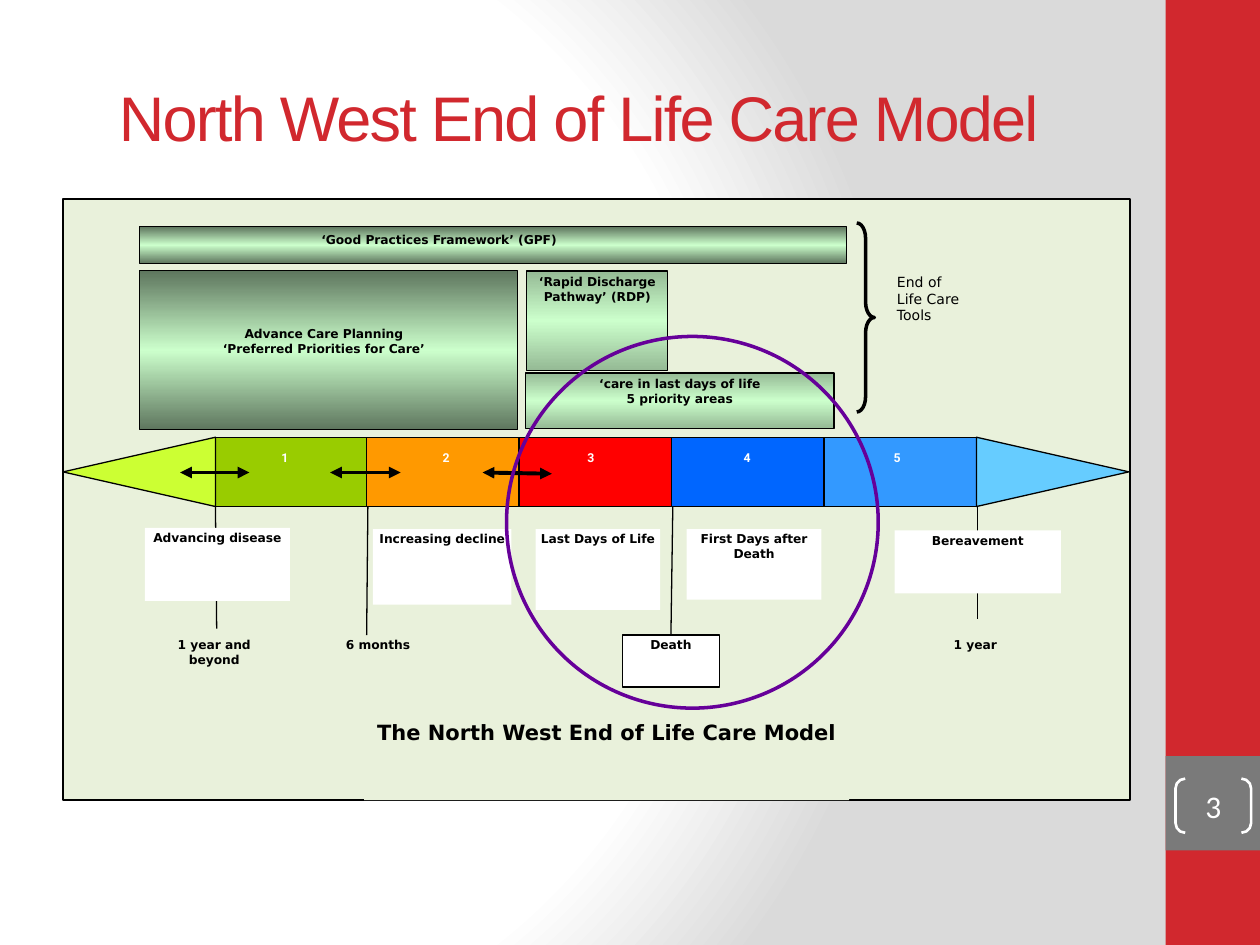
from copy import deepcopy
from pptx import Presentation
from pptx.dml.color import RGBColor as RGB
from pptx.enum.shapes import MSO_CONNECTOR as LINK, MSO_SHAPE as FORM
from pptx.enum.text import MSO_ANCHOR as ANCHOR, PP_ALIGN as ALIGN
from pptx.oxml import parse_xml
from pptx.oxml.ns import nsdecls, qn
from pptx.util import Inches, Pt


class Theme:
    red, gray, white, black = "D1282E", "7A7A7A", "FFFFFF", "000000"
    panel, ring = "E9F1DB", "660099"
    soft = [(0, "95BA95"), (0.5, "CCFFCC"), (1, "95BA95")]
    deep = [(0, "5E765E"), (0.5, "CCFFCC"), (1, "5E765E")]
    back = [(0, "FFFFFF"), (0.75, "FFFFFF"), (1, "DADADA")]
    stages = ["99CC00", "FF9900", "FF0000", "0066FF", "3399FF"]
    start, end = "CCFF33", "66CCFF"
    body, head, digit, page = "DejaVu Sans", "Arial", "Roboto", "Calibri"
    small, note, caption, number, title = 7, 8, 12, 18, 36


def grade(fill, root, stops):
    fill.gradient()
    marks = root.find(".//" + qn("a:gsLst"))
    marks.append(deepcopy(marks[0]))
    for mark, (place, color) in zip(fill.gradient_stops, stops):
        mark.position = place
        mark.color.rgb = RGB.from_string(color)


def box(at, text="", form=FORM.RECTANGLE, fill=None, line=None, width=0.75,
        size=Theme.small, font=Theme.body, color=Theme.black, bold=True,
        align=ALIGN.CENTER, anchor=ANCHOR.TOP, inset=(0.06, 0.03)):
    at = [Inches(n) for n in at]
    if fill or line:
        shape = slide.shapes.add_shape(form, *at)
        shape.shadow.inherit = False
        if isinstance(fill, list):
            grade(shape.fill, shape._element, fill)
            shape.fill.gradient_angle = 90
        elif fill:
            shape.fill.solid()
            shape.fill.fore_color.rgb = RGB.from_string(fill)
        else:
            shape.fill.background()
        if line:
            shape.line.color.rgb = RGB.from_string(line)
            shape.line.width = Pt(width)
        else:
            shape.line.fill.background()
    else:
        shape = slide.shapes.add_textbox(*at)
    if text:
        frame = shape.text_frame
        frame.word_wrap = True
        frame.vertical_anchor = anchor
        frame.margin_left = frame.margin_right = Inches(inset[0])
        frame.margin_top = frame.margin_bottom = Inches(inset[1])
        frame.text = text
        for par in frame.paragraphs:
            par.alignment = align
            par.font.size, par.font.name, par.font.bold = Pt(size), font, bold
            par.font.color.rgb = RGB.from_string(color)
    return shape


deck = Presentation()
deck.slide_width, deck.slide_height = Inches(10), Inches(7.5)
slide = deck.slides.add_slide(deck.slide_layouts[6])

grade(slide.background.fill, slide._element, Theme.back)
blend = slide._element.find(".//" + qn("a:gradFill"))
blend.remove(blend.find(qn("a:lin")))
blend.append(parse_xml(
    f'<a:path {nsdecls("a")} path="circle">'
    '<a:fillToRect l="20000" t="50000" r="100000" b="50000"/></a:path>'))

box((9.25, 0, 0.75, 7.5), fill=Theme.red)
box((9.25, 6, 0.75, 0.75), fill=Theme.gray)
title = box((0.43, 0.3, 8.33, 1.25), "North West End of Life Care Model",
            size=Theme.title, font=Theme.head, color=Theme.red, bold=False,
            anchor=ANCHOR.MIDDLE, inset=(0.1, 0.05))
title.text_frame.paragraphs[0].runs[0].font._element.set("spc", "-100")

box((0.5, 1.58, 8.47, 4.77), fill=Theme.panel, line=Theme.black, width=1.5)
box((2.89, 5.68, 3.85, 0.67), "The North West End of Life Care Model",
    fill=Theme.panel, size=Theme.caption)

tools = [
    ((4.17, 2.96, 2.45, 0.44), Theme.soft,
     "‘care in last days of life\n5 priority areas"),
    ((4.18, 2.15, 1.12, 0.79), Theme.soft, "‘Rapid Discharge Pathway’ (RDP)"),
    ((1.11, 2.15, 3, 1.26), Theme.deep, ""),
    ((1.11, 1.8, 5.61, 0.29), Theme.deep, ""),
]
for at, fill, text in tools:
    box(at, text, fill=fill, line=Theme.black)
box((1.33, 2.56, 2.48, 0.48),
    "Advance Care Planning\n‘Preferred Priorities for Care’")
box((2.49, 1.81, 2.73, 0.33), "‘Good Practices Framework’ (GPF)",
    align=ALIGN.LEFT)
box((7.02, 2.12, 1.11, 1.16), "End of\nLife Care\nTools", size=Theme.note,
    bold=False, align=ALIGN.LEFT, inset=(0.1, 0.05))
brace = box((6.8, 1.77, 0.14, 1.5), form=FORM.RIGHT_BRACE, line=Theme.black,
            width=2)
brace.adjustments[0] = 0.867

mids = [2.26, 3.54, 4.69, 5.93, 7.12]
for i, (fill, mid) in enumerate(zip(Theme.stages, mids)):
    box((1.7 + 1.21 * i, 3.47, 1.21, 0.55), fill=fill, line=Theme.black)
    box((mid - 0.22, 3.54, 0.44, 0.37), str(i + 1), font=Theme.digit,
        color=Theme.white)
for left, turn, fill in [(0.83, 270, Theme.start), (8.08, 90, Theme.end)]:
    tip = box((left, 3.14, 0.55, 1.21), form=FORM.ISOSCELES_TRIANGLE,
              fill=fill, line=Theme.black)
    tip.rotation = turn

death = box((4.94, 5.04, 0.77, 0.41), "Death", fill=Theme.white,
            line=Theme.black, width=1, inset=(0.04, 0.02))
links = [
    (5.33, 5.04, 5.34, 4.02, False),
    (1.71, 4.02, 1.72, 4.99, False),
    (7.76, 4.02, 7.76, 4.91, False),
    (2.91, 5.04, 2.92, 4.02, False),
    (2.62, 3.75, 3.18, 3.75, True),
    (1.43, 3.75, 1.98, 3.75, True),
    (3.83, 3.75, 4.38, 3.76, True),
]
for i, (*ends, arrow) in enumerate(links):
    link = slide.shapes.add_connector(LINK.STRAIGHT, *map(Inches, ends))
    link.line.color.rgb = RGB.from_string(Theme.black)
    link.line.width = Pt(2.25 if arrow else 0.75)
    if arrow:
        for tag in ("headEnd", "tailEnd"):
            link.line._get_or_add_ln().append(
                parse_xml(f'<a:{tag} {nsdecls("a")} type="triangle"/>'))
    link._element.spPr.append(parse_xml(f'<a:effectLst {nsdecls("a")}/>'))
    if i == 0:
        link.begin_connect(death, 0)

labels = [
    ((1.15, 4.19, 1.15, 0.58), "Advancing disease", Theme.white),
    ((2.96, 4.2, 1.1, 0.6), "Increasing decline", Theme.white),
    ((4.25, 4.2, 0.99, 0.64), "Last Days of Life", Theme.white),
    ((5.45, 4.2, 1.07, 0.56), "First Days after Death", Theme.white),
    ((7.1, 4.21, 1.32, 0.5), "Bereavement", Theme.white),
    ((1.24, 5.04, 0.92, 0.41), "1 year and beyond", None),
    ((2.45, 5.04, 1.1, 0.41), "6 months", None),
    ((7.28, 5.04, 0.92, 0.41), "1 year", None),
]
for at, text, fill in labels:
    box(at, text, fill=fill, inset=(0.04, 0.02))

box((4.02, 2.67, 2.95, 2.95), form=FORM.OVAL, line=Theme.ring, width=2)
page = box((9.33, 6.18, 0.6, 0.43), "3", form=FORM.DOUBLE_BRACKET,
           line=Theme.white, width=1.5, size=Theme.number, font=Theme.page,
           color=Theme.white, bold=False, anchor=ANCHOR.MIDDLE, inset=(0, 0))
page.adjustments[0] = 0.179

deck.save("out.pptx")
